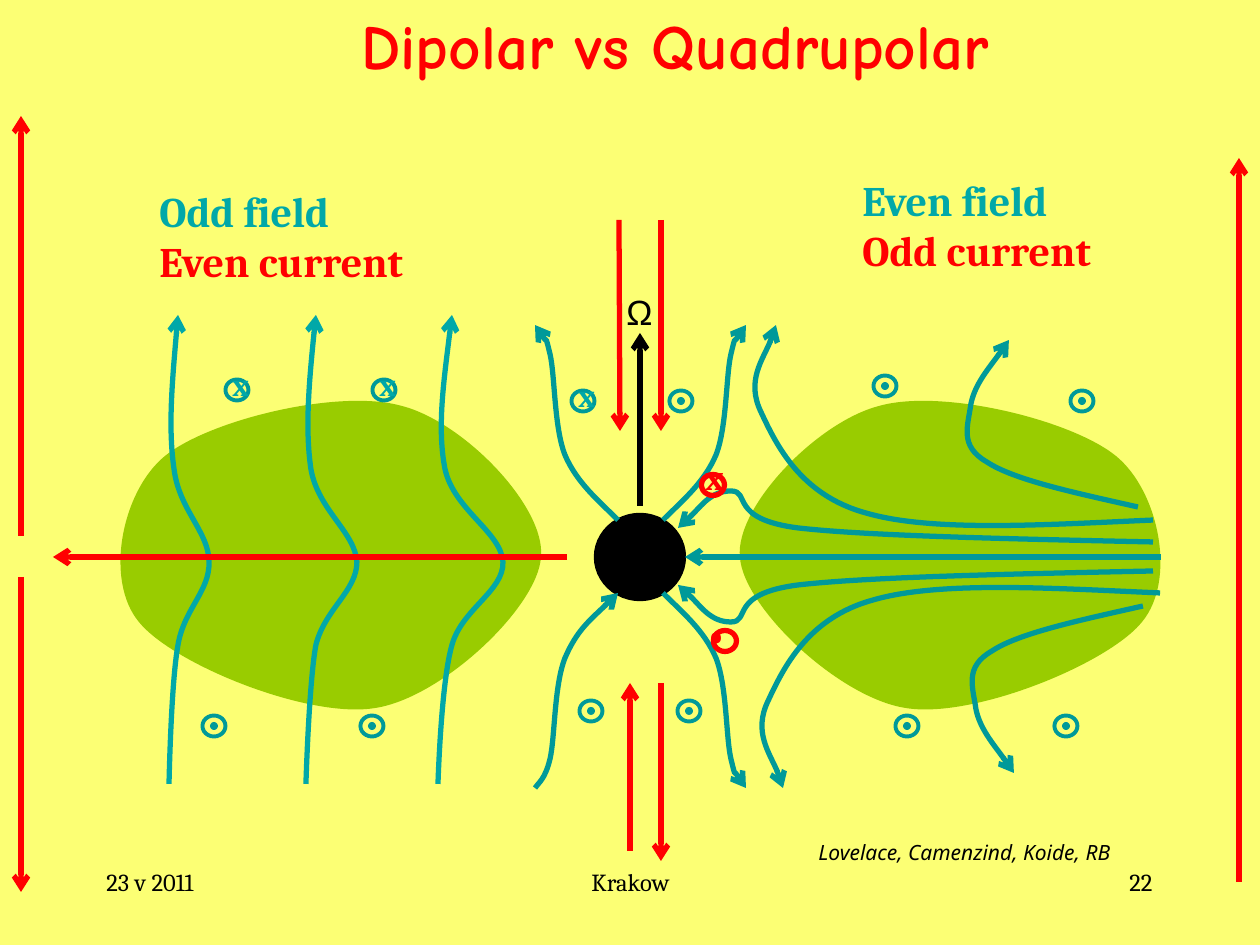
from pptx import Presentation
from pptx.dml.color import RGBColor
from pptx.enum.shapes import MSO_CONNECTOR, MSO_SHAPE
from pptx.enum.text import PP_ALIGN
from pptx.oxml.ns import qn
from pptx.util import Emu, Pt
from lxml.etree import SubElement

SCALE = 914400 / 126  # EMU in one px
YELLOW = RGBColor(0xFC, 0xFF, 0x74)
GREEN = RGBColor(0x99, 0xCC, 0x00)
TEAL = RGBColor(0x00, 0x99, 0x99)
AQUA = RGBColor(0x01, 0xA8, 0xA8)
RED = RGBColor(0xFF, 0x00, 0x00)
BLACK = RGBColor(0x00, 0x00, 0x00)
MIRROR_X, MIRROR_Y = 1281, 1113  # sums of mirrored coordinates

# Curves: a start point, then two control points and an end point per arc
TORUS = [(1116, 456), (1072, 420), (942, 388), (879, 406),
         (817, 422), (735, 507), (740, 557), (743, 607), (839, 698), (906, 708),
         (973, 719), (1108, 664), (1142, 622), (1177, 580), (1159, 491), (1116, 456)]
JET = [(663, 520), (682, 501), (704, 483), (716, 455),
       (727, 427), (726, 375), (731, 354), (736, 333), (743, 330), (746, 325)]
# Quadrupolar field above the equator, with the shift of its lower mirror
QUADRUPOLE = [
    ([(1138, 507), (1076, 493), (1014, 480), (987, 462),
      (959, 446), (968, 426), (971, 404), (975, 384), (1003, 350), (1009, 340)], 5),
    ([(1153, 520), (1042, 525), (931, 532), (866, 513),
      (800, 495), (776, 444), (761, 412), (746, 381), (774, 340), (776, 325)], 7),
    ([(1153, 542), (1011, 539), (868, 536), (798, 528),
      (728, 519), (751, 491), (731, 491), (711, 491), (687, 522), (678, 528)], 0),
]
DIPOLE_Y = [315, 372, 428, 469, 510, 532, 562, 591, 609, 645, 683, 784, 784]
DIPOLE_X = [
    [178, 173, 168, 174, 179, 209, 209, 210, 184, 178, 171, 169, 169],
    [316, 310, 305, 311, 318, 355, 357, 357, 325, 316, 309, 306, 306],
    [452, 445, 437, 445, 454, 501, 503, 504, 462, 452, 441, 438, 438],
]
# Straight arrows: from, to, colour
ARROWS = [
    ((1161, 557), (685, 557), TEAL), ((640, 506), (640, 333), BLACK),
    ((21, 536), (21, 116), RED), ((1239, 882), (1239, 158), RED),
    ((619, 220), (620, 431), RED), ((630, 851), (630, 683), RED),
    ((661, 683), (661, 861), RED), ((661, 220), (661, 431), RED),
    ((21, 577), (21, 892), RED), ((567, 557), (53, 557), RED),
]
# Centres of the field and current symbols
OUTWARD = [(885, 386), (689, 711), (681, 401), (1066, 726), (1082, 401),
           (907, 726), (591, 711), (214, 726), (372, 726)]
INWARD = [(237, 390), (384, 390), (583, 401)]
CURRENT_IN, CURRENT_OUT = (713, 485), (725, 641)
# Text: box, lines with colours, font, size, extra settings
LABELS = [
    ((94, 861, 262, 63), [("23 v 2011", BLACK)], "Cambria", 14, {}),
    ((431, 861, 399, 63), [("Krakow", BLACK)], "Cambria", 14, {"align": PP_ALIGN.CENTER}),
    ((903, 861, 262, 63), [("22", BLACK)], "Cambria", 14, {"align": PP_ALIGN.RIGHT}),
    ((349, 0, 733, 89), [("Dipolar vs Quadrupolar", RED)], "Comic Neue", 36, {"bold": True}),
    ((850, 168, 536, 115), [("Even field", AQUA), ("Odd current", RED)],
     "Cambria", 24, {"bold": True}),
    ((147, 179, 536, 115), [("Odd field", AQUA), ("Even current", RED)],
     "Cambria", 24, {"bold": True}),
    ((806, 833, 404, 38), [("Lovelace, Camenzind, Koide, RB", BLACK)],
     "Noto Sans", 12, {"italic": True}),
    ((614, 284, 38, 97), [("Ω", BLACK)], "Arial", 20, {}),
    ((703, 567, 18, 97), [(".", RED)], "Cambria", 40, {"bold": True}),
]


def px(value):
    return Emu(round(value * SCALE))


def add_arrowhead(shape, end="tailEnd"):
    SubElement(shape.line._get_or_add_ln(), qn("a:" + end), type="arrow")


def add_curve(page, points, end="tailEnd", fill=None, color=TEAL):
    builder = page.shapes.build_freeform(*points[0], scale=SCALE)
    builder.add_line_segments(points[1:], close=False)
    curve = builder.convert_to_shape()
    curve.shadow.inherit = False
    # Join each three line segments into one Bezier arc
    outline = next(curve._element.iter(qn("a:path")))
    segments = outline.findall(qn("a:lnTo"))
    for first in range(0, len(segments), 3):
        arc = SubElement(outline, qn("a:cubicBezTo"))
        for segment in segments[first:first + 3]:
            arc.append(segment[0])
            outline.remove(segment)
    if fill is not None:
        SubElement(outline, qn("a:close"))
        curve.fill.solid()
        curve.fill.fore_color.rgb = fill
        curve.line.fill.background()
    else:
        curve.fill.background()
        curve.line.color.rgb = color
        curve.line.width = Pt(3)
        add_arrowhead(curve, end)


def flip_x(points):
    return [(MIRROR_X - x, y) for x, y in points]


def flip_y(points, shift=0):
    return [(x + shift, MIRROR_Y - y) for x, y in points]


def add_ellipse(page, center, width, height, fill=None, line=None, weight=2.25):
    x, y = center
    ellipse = page.shapes.add_shape(MSO_SHAPE.OVAL, px(x - width / 2), px(y - height / 2),
                                    px(width), px(height))
    ellipse.shadow.inherit = False
    for target, color in ((ellipse.fill, fill), (ellipse.line.fill, line)):
        if color is None:
            target.background()
        else:
            target.solid()
            target.fore_color.rgb = color
    if line is not None:
        ellipse.line.width = Pt(weight)


def add_label(page, place, lines, font, size, align=None, bold=False, italic=False,
              outline=None):
    frame = page.shapes.add_textbox(*map(px, place)).text_frame
    frame.word_wrap = True
    for index, (words, color) in enumerate(lines):
        para = frame.add_paragraph() if index else frame.paragraphs[0]
        para.alignment = align
        span = para.add_run()
        span.text = words
        span.font.name, span.font.size = font, Pt(size)
        span.font.bold, span.font.italic = bold, italic
        span.font.color.rgb = color
        if outline:
            properties = span.font._element
            border = SubElement(properties, qn("a:ln"), w=str(Pt(0.75)))
            SubElement(SubElement(border, qn("a:solidFill")), qn("a:srgbClr"), val=outline)
            properties.insert(0, border)


def main():
    deck = Presentation()
    deck.slide_width, deck.slide_height = px(1260), px(945)
    page = deck.slides.add_slide(deck.slide_layouts[6])
    page.background.fill.solid()
    page.background.fill.fore_color.rgb = YELLOW

    # Black hole and torus
    add_ellipse(page, (640, 557), 91, 87, fill=BLACK, line=BLACK, weight=0.75)
    for points in (TORUS, flip_x(TORUS)):
        add_curve(page, points, fill=GREEN)

    # Field lines
    for points, shift in QUADRUPOLE:
        add_curve(page, points)
        add_curve(page, flip_y(points, shift))
    for points in (JET, flip_y(JET), flip_x(JET)):
        add_curve(page, points)
    add_curve(page, flip_x(flip_y(JET)), end="headEnd")
    for columns in DIPOLE_X:
        add_curve(page, list(zip(columns, DIPOLE_Y)), end="headEnd", color=AQUA)

    # Symbols for directions into and out of the plane
    for center in OUTWARD:
        add_ellipse(page, center, 23, 21, line=TEAL)
        add_ellipse(page, center, 8, 8, fill=TEAL)
    for x, y in INWARD:
        add_ellipse(page, (x, y), 23, 21, line=TEAL)
        add_label(page, (x - 17, y - 31, 42, 50), [("x", AQUA)], "Cambria", 18,
                  bold=True, outline="E6F49A")
    for center in (CURRENT_IN, CURRENT_OUT):
        add_ellipse(page, center, 23, 21, line=RED, weight=3)
    x, y = CURRENT_IN
    add_label(page, (x - 20, y - 36, 37, 97), [("x", RED)], "Cambria", 20, bold=True)

    # Labels
    for place, lines, font, size, extra in LABELS:
        add_label(page, place, lines, font, size, **extra)

    # Rotation axis, equator and currents
    for start, stop, color in ARROWS:
        arrow = page.shapes.add_connector(MSO_CONNECTOR.STRAIGHT, *map(px, start + stop))
        arrow.line.color.rgb = color
        arrow.line.width = Pt(3)
        add_arrowhead(arrow)
        SubElement(arrow._element.spPr, qn("a:effectLst"))

    deck.save("out.pptx")


if __name__ == "__main__":
    main()
